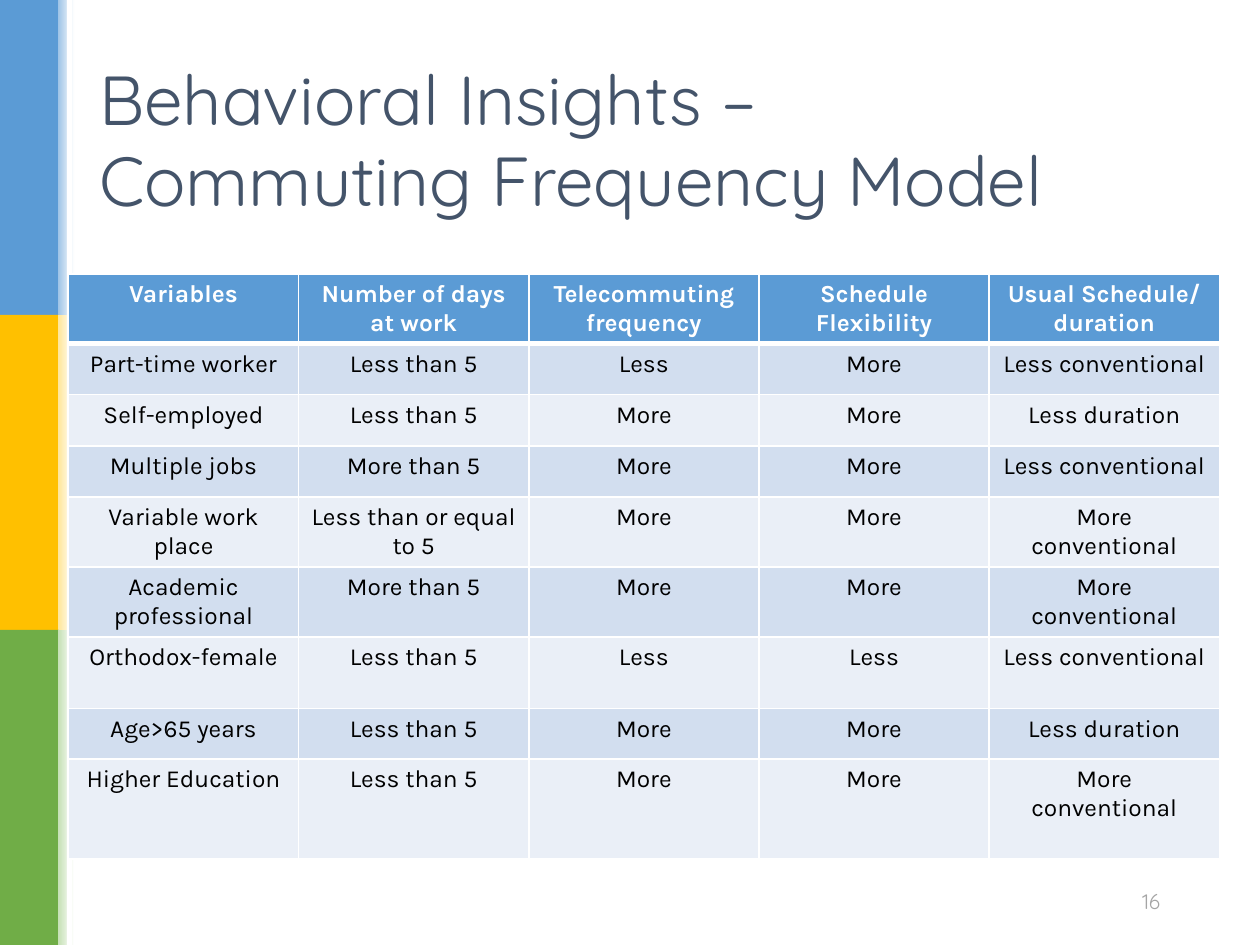
import pptx
import pptx.util
import pptx.dml.color
import pptx.enum.shapes
import pptx.enum.text
import pptx.oxml.ns
from lxml import etree

Cm, Pt = pptx.util.Cm, pptx.util.Pt
ALIGN, ANCHOR = pptx.enum.text.PP_ALIGN, pptx.enum.text.MSO_ANCHOR

# Content
TITLE = "Behavioral Insights –\vCommuting Frequency Model"
PAGE = "16"
ROWS = [
    ("Variables", "Number of days at work", "Telecommuting frequency",
     "Schedule Flexibility", "Usual Schedule/ duration"),
    ("Part-time worker", "Less than 5", "Less", "More", "Less conventional"),
    ("Self-employed", "Less than 5", "More", "More", "Less duration"),
    ("Multiple jobs", "More than 5", "More", "More", "Less conventional"),
    ("Variable work place", "Less than or equal to 5", "More", "More",
     "More conventional"),
    ("Academic professional", "More than 5", "More", "More",
     "More conventional"),
    ("Orthodox-female", "Less than 5", "Less", "Less", "Less conventional"),
    ("Age>65 years", "Less than 5", "More", "More", "Less duration"),
    ("Higher Education", "Less than 5", "More", "More", "More conventional"),
]
HEIGHTS = [1.39, 1.03, 1.03, 1.03, 1.41, 1.41, 1.45, 1.01, 2.02]
BANDS = [("5B9BD5", "9DC3E6"), ("FFC000", "FFE699"), ("70AD47", "C5E0B4")]

# Formats
HEAD = dict(name="Karla", size=Pt(14), bold=True, color="FFFFFF")
BODY = dict(HEAD, bold=False, color="000000")
LARGE = dict(name="Quicksand", size=Pt(39.6), color="44546A")
SMALL = dict(name="Quicksand", size=Pt(12), color="A5A5A5")


def rgb(code):
    return pptx.dml.color.RGBColor.from_string(code)


def style(para, look, align):
    para.alignment = align
    for key, value in look.items():
        if key == "color":
            para.font.color.rgb = rgb(value)
        else:
            setattr(para.font, key, value)


def block(slide, left, top, width, height, start, end=None):
    shape = slide.shapes.add_shape(
        pptx.enum.shapes.MSO_SHAPE.RECTANGLE,
        Cm(left), Cm(top), Cm(width), Cm(height))
    shape.shadow.inherit = False
    shape.line.fill.background()
    if end:
        shape.fill.gradient()
        shape.fill.gradient_angle = 0
        for stop, code, spot in zip(shape.fill.gradient_stops,
                                    (start, end), (0, 1)):
            stop.color.rgb, stop.position = rgb(code), spot
    else:
        shape.fill.solid()
        shape.fill.fore_color.rgb = rgb(start)


def label(slide, place, text, look, align):
    box = slide.shapes.add_textbox(*map(Cm, place))
    frame = box.text_frame
    frame.word_wrap = True
    frame.vertical_anchor = ANCHOR.MIDDLE
    frame.text = text
    style(frame.paragraphs[0], look, align)
    return frame.paragraphs[0]


def border(cell, sides):
    props = cell._tc.get_or_add_tcPr()
    for spot, (side, width) in enumerate(sides.items()):
        line = etree.Element(pptx.oxml.ns.qn("a:ln" + side), w=str(Pt(width)))
        fill = etree.SubElement(line, pptx.oxml.ns.qn("a:solidFill"))
        etree.SubElement(fill, pptx.oxml.ns.qn("a:srgbClr"), val="FFFFFF")
        props.insert(spot, line)


def grid(slide):
    table = slide.shapes.add_table(
        len(ROWS), len(ROWS[0]), Cm(1.38), Cm(5.52), Cm(23.2),
        Cm(sum(HEIGHTS))).table
    for col in table.columns:
        col.width = Cm(23.2 / len(ROWS[0]))
    for r, (texts, height) in enumerate(zip(ROWS, HEIGHTS)):
        table.rows[r].height = Cm(height)
        tint = "5B9BD5" if r == 0 else ("EAEFF7", "D2DEEF")[r % 2]
        for c, text in enumerate(texts):
            cell = table.cell(r, c)
            cell.text = text
            cell.fill.solid()
            cell.fill.fore_color.rgb = rgb(tint)
            border(cell, dict(L=1, R=1, T=3 if r == 1 else 1,
                              B=3 if r == 0 else 1))
            style(cell.text_frame.paragraphs[0], BODY if r else HEAD,
                  ALIGN.CENTER)


def main():
    deck = pptx.Presentation()
    deck.slide_width, deck.slide_height = Cm(25.4), Cm(19.05)
    slide = deck.slides.add_slide(deck.slide_layouts[6])

    # Side bands, each with a fading edge
    step = 19.05 / len(BANDS)
    for i, (full, pale) in enumerate(BANDS):
        block(slide, 0, i * step, 1.19, step, full)
        block(slide, 1.17, i * step, 0.33, step, pale, "FFFFFF")
    block(slide, 1.35, 0, 0.1, 19.05, "FFFFFF")

    # Table, title and page number
    grid(slide)
    para = label(slide, (1.75, 1.02, 21.9, 3.68), TITLE, LARGE, ALIGN.LEFT)
    para.line_spacing = 0.97
    label(slide, (16.81, 17.65, 6.83, 1.02), PAGE, SMALL, ALIGN.RIGHT)

    deck.save("out.pptx")


if __name__ == "__main__":
    main()
